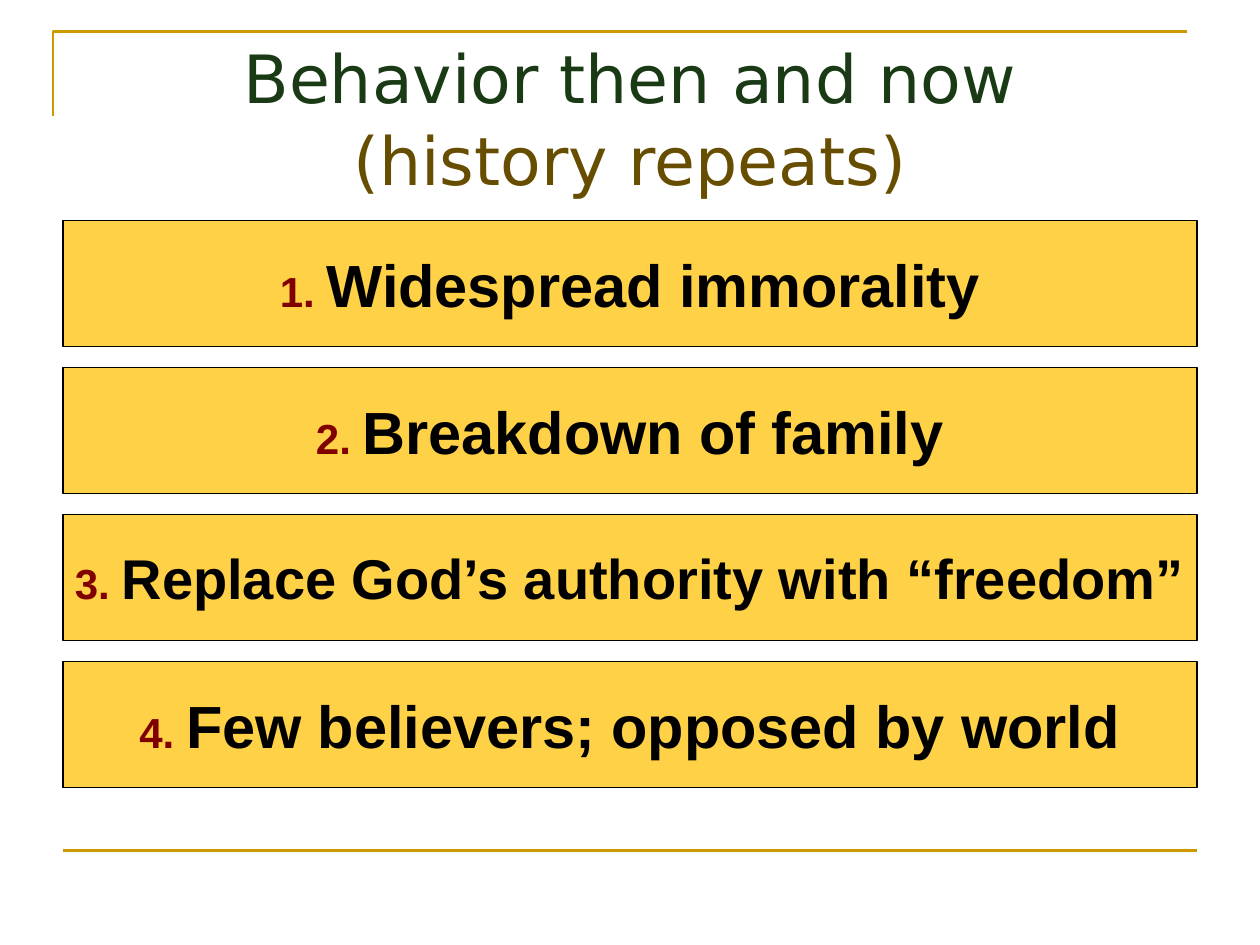
import dataclasses

import pptx
import pptx.dml.color
import pptx.enum.shapes
import pptx.enum.text
import pptx.oxml.ns
import pptx.util
from lxml import etree

Pt = pptx.util.Pt
GOLD = "CC9900"
MARGIN, WIDTH = 36, 648
BAR_TOP, BAR_HEIGHT, BAR_PITCH = 126, 72, 84


@dataclasses.dataclass
class Span:
    text: str
    font: str
    size: float
    color: str
    bold: bool = False


@dataclasses.dataclass
class Behavior:
    text: str
    size: float = 34


BEHAVIORS = [
    Behavior("Widespread immorality"),
    Behavior("Breakdown of family"),
    Behavior("Replace God’s authority with “freedom”", 32),
    Behavior("Few believers; opposed by world"),
]


def rgb(color: str) -> pptx.dml.color.RGBColor:
    return pptx.dml.color.RGBColor.from_string(color)


def set_line(shape, color: str, width: float) -> None:
    shape.line.color.rgb = rgb(color)
    shape.line.width = Pt(width)


def add_span(para, span: Span) -> None:
    run = para.add_run()
    run.text = span.text
    run.font.name = span.font
    run.font.size = Pt(span.size)
    run.font.bold = span.bold
    run.font.color.rgb = rgb(span.color)


def center_text(shape, wrap: bool, inset: float):
    frame = shape.text_frame
    frame.word_wrap = wrap
    frame.auto_size = pptx.enum.text.MSO_AUTO_SIZE.NONE
    frame.vertical_anchor = pptx.enum.text.MSO_ANCHOR.MIDDLE
    frame.margin_top = frame.margin_bottom = Pt(inset)
    para = frame.paragraphs[0]
    para.alignment = pptx.enum.text.PP_ALIGN.CENTER
    return para


def add_corner(page) -> None:
    left, top = Pt(30.24), Pt(18)
    builder = page.shapes.build_freeform(left, Pt(66.24))
    builder.add_line_segments([(left, top), (Pt(678.24), top)], close=False)
    corner = builder.convert_to_shape()
    corner.shadow.inherit = False
    corner.fill.background()
    set_line(corner, GOLD, 1.5)


def add_rule(page, top: float):
    rule = page.shapes.add_connector(
        pptx.enum.shapes.MSO_CONNECTOR.STRAIGHT,
        Pt(MARGIN), Pt(top), Pt(MARGIN + WIDTH), Pt(top),
    )
    set_line(rule, GOLD, 1.5)
    etree.SubElement(rule.element.spPr, pptx.oxml.ns.qn("a:effectLst"))
    return rule


def format_title(title) -> None:
    title.left, title.top = Pt(MARGIN), Pt(21.6)
    title.width, title.height = Pt(WIDTH), Pt(90)
    para = center_text(title, wrap=True, inset=0)
    para.line_spacing = 1.03
    add_span(para, Span("Behavior then and now", "DejaVu Sans", 38, "1A3A15"))
    para.add_line_break()
    add_span(para, Span("(history repeats)", "DejaVu Sans", 38, "664D00"))


def add_bar(page, index: int, behavior: Behavior) -> None:
    bar = page.shapes.add_shape(
        pptx.enum.shapes.MSO_SHAPE.RECTANGLE,
        Pt(MARGIN), Pt(BAR_TOP + index * BAR_PITCH), Pt(WIDTH), Pt(BAR_HEIGHT),
    )
    bar.shadow.inherit = False
    bar.fill.solid()
    bar.fill.fore_color.rgb = rgb("FFD147")
    set_line(bar, "000000", 0.75)
    para = center_text(bar, wrap=False, inset=3.6)
    add_span(para, Span(f"{index + 1}. ", "Arial", 24, "800000", True))
    add_span(para, Span(behavior.text, "Arial", behavior.size, "000000", True))


def main() -> None:
    deck = pptx.Presentation()
    deck.slide_width, deck.slide_height = Pt(720), Pt(540)
    page = deck.slides.add_slide(deck.slide_layouts.get_by_name("Title Only"))
    title = page.shapes.title
    add_corner(page)
    rule = add_rule(page, 486)
    rule.element.addnext(title.element)
    format_title(title)
    for index, behavior in enumerate(BEHAVIORS):
        add_bar(page, index, behavior)
    deck.save("out.pptx")


if __name__ == "__main__":
    main()
